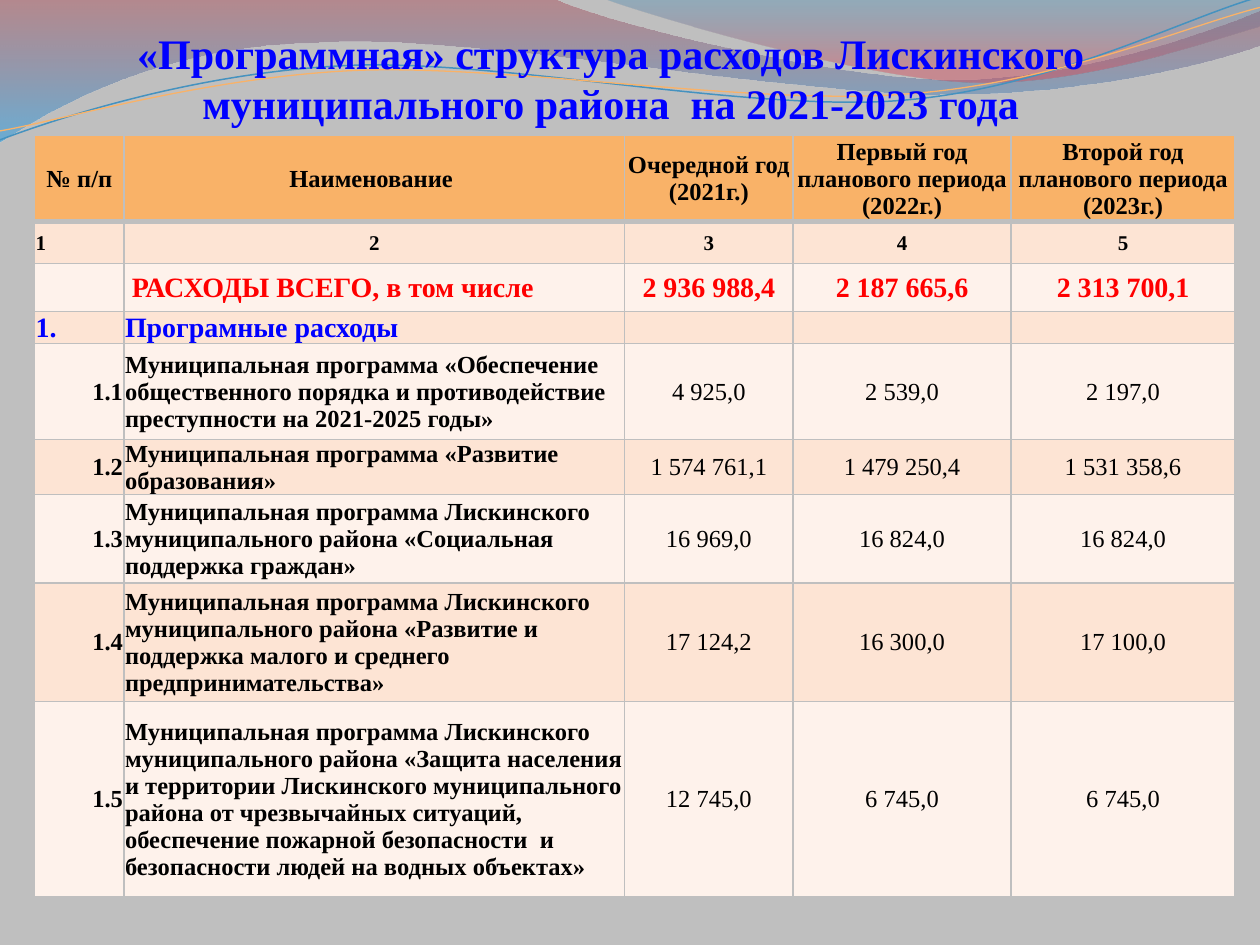
from dataclasses import dataclass

from pptx import Presentation
from pptx.dml.color import RGBColor
from pptx.enum.text import MSO_ANCHOR, MSO_AUTO_SIZE, PP_ALIGN
from pptx.oxml import parse_xml
from pptx.oxml.ns import nsdecls, qn
from pptx.util import Cm, Pt
from lxml.etree import SubElement


@dataclass(frozen=True)
class Theme:
    font: str = "Times New Roman"
    page: str = "BFBFBF"
    header: str = "F9B268"
    bands: tuple = ("FEF2EB", "FDE4D4")
    text: str = "000000"
    accent: str = "0000FF"
    total: str = "FF0000"
    blue_line: str = "4592BF"
    orange_line: str = "F9B268"
    # gradient stops: position, colour, opacity in percent
    wide_wave: tuple = ((0, "A84752", 45), (1, "249FE6", 55))
    right_wave: tuple = ((0, "2A7EAF", 30), (0.8, "D24B5A", 45))
    title_size: int = 24
    section_size: int = 16
    body_size: int = 14
    number_size: int = 12


theme = Theme()
LEFT, CENTER, RIGHT = PP_ALIGN.LEFT, PP_ALIGN.CENTER, PP_ALIGN.RIGHT


def add_curve(start, segments, closed):
    """Draw from start in cm; a segment is a line (x, y) or a Bezier (x1, y1, x2, y2, x, y)."""
    places = [(Cm(segment[i]), Cm(segment[i + 1]))
              for segment in segments for i in range(0, len(segment), 2)]
    builder = page.shapes.build_freeform(Cm(start[0]), Cm(start[1]), scale=1.0)
    builder.add_line_segments(places, close=closed)
    curve = builder.convert_to_shape()
    curve.shadow.inherit = False
    # Each Bezier takes the three points that the builder wrote as lines
    lines = iter(list(curve._element.iter(qn("a:lnTo"))))
    for segment in segments:
        nodes = [next(lines) for _ in range(len(segment) // 2)]
        if len(nodes) == 3:
            bezier = parse_xml(f'<a:cubicBezTo {nsdecls("a")}/>')
            nodes[0].addprevious(bezier)
            for node in nodes:
                bezier.append(node[0])
                node.getparent().remove(node)
    return curve


def add_text(para, text, size, colour, bold, align):
    para.alignment = align
    span = para.add_run()
    span.text = text
    span.font.name = theme.font
    span.font.size = Pt(size)
    span.font.bold = bold
    span.font.color.rgb = RGBColor.from_string(colour)


deck = Presentation()
deck.slide_width, deck.slide_height = Cm(25.4), Cm(19.05)
page = deck.slides.add_slide(deck.slide_layouts[5])
page.background.fill.solid()
page.background.fill.fore_color.rgb = RGBColor.from_string(theme.page)

# Waves along the top
waves = [
    (theme.wide_wave, (0, 0), [
        (11.18, -0.02), (12.09, 0.43, 16.87, 1.6, 19.25, 1.6),
        (21.67, 1.6, 24.33, 0.66, 25.4, 0.23), (25.42, 0.91),
        (24.97, 1.12, 22.1, 1.93, 18.95, 1.9), (15.8, 1.9, 9.7, 0.71, 6.53, 0.86),
        (3.28, 0.91, 1.17, 2.11, -0.02, 2.87), (0, 0)]),
    (theme.right_wave, (12.17, -0.02), [
        (12.93, 0.28, 17.32, 1.57, 19.53, 1.65),
        (21.74, 1.75, 24.41, 0.81, 25.4, 0.53), (25.4, 0), (12.17, -0.02)]),
]
for stops, start, segments in waves:
    wave = add_curve(start, segments, closed=True)
    wave.line.fill.background()
    wave.fill.gradient()
    wave.fill.gradient_angle = 270
    for stop, (position, colour, _) in zip(wave.fill.gradient_stops, stops):
        stop.position = position
        stop.color.rgb = RGBColor.from_string(colour)
    for node, (_, _, opacity) in zip(wave._element.spPr.iter(qn("a:srgbClr")), stops):
        SubElement(node, qn("a:alpha"), val=str(opacity * 1000))

ribbons = [
    (theme.blue_line, 0.85, (0, 2.82), [
        (1.22, 2.36, 4.01, 1.45, 7.04, 1.32), (10.03, 1.19, 15.06, 2.26, 18.11, 2.03),
        (21.16, 1.8, 23.83, 0.38, 25.35, -0.05)]),
    (theme.orange_line, 0.75, (0, 2.64), [
        (1.19, 2.44, 4.17, 1.55, 7.19, 1.42), (10.24, 1.3, 15.16, 2.13, 18.21, 1.9),
        (21.23, 1.7, 23.9, 0.53, 25.4, 0.15)]),
]
for colour, width, start, segments in ribbons:
    ribbon = add_curve(start, segments, closed=False)
    ribbon.fill.background()
    ribbon.line.color.rgb = RGBColor.from_string(colour)
    ribbon.line.width = Pt(width)

# Title, brought in front of the waves
title = page.shapes.title
page.shapes._spTree.append(title._element)
title.left, title.top, title.width, title.height = Cm(0.6), Cm(0.6), Cm(23.42), Cm(1.98)
frame = title.text_frame
frame.word_wrap = True
frame.auto_size = MSO_AUTO_SIZE.NONE
frame.vertical_anchor = MSO_ANCHOR.BOTTOM
frame.margin_left = frame.margin_right = frame.margin_bottom = 0
frame.margin_top = Cm(0.13)
add_text(frame.paragraphs[0],
         "«Программная» структура расходов Лискинского муниципального района  на 2021-2023 года",
         theme.title_size, theme.accent, True, CENTER)

# Table: height in cm, size, colour, alignment of the first two columns, cells
column_widths = [1.8, 10.09, 3.4, 4.39, 4.52]
body = (theme.body_size, theme.text, RIGHT, LEFT)
rows = [
    (1.75, theme.body_size, theme.text, CENTER, CENTER,
     ["№ п/п", "Наименование ", "Очередной год (2021г.)",
      "Первый год планового периода (2022г.)", "Второй год планового периода (2023г.)"]),
    (0.84, theme.number_size, theme.text, LEFT, CENTER, ["1", "2", "3", "4", "5"]),
    (0.97, theme.section_size, theme.total, LEFT, LEFT,
     ["", " РАСХОДЫ ВСЕГО, в том числе", "2 936 988,4", "2 187 665,6", "2 313 700,1"]),
    (0.61, theme.section_size, theme.accent, LEFT, LEFT,
     ["1.", "Програмные расходы", "", "", ""]),
    (1.93, *body,
     ["1.1", "Муниципальная программа «Обеспечение общественного порядка и противодействие "
      "преступности на 2021-2025 годы»", "4 925,0", "2 539,0", "2 197,0"]),
    (0.79, *body,
     ["1.2", "Муниципальная программа «Развитие образования»",
      "1 574 761,1", "1 479 250,4", "1 531 358,6"]),
    (1.78, *body,
     ["1.3", "Муниципальная программа Лискинского муниципального района «Социальная "
      "поддержка граждан»", "16 969,0", "16 824,0", "16 824,0"]),
    (2.39, *body,
     ["1.4", "Муниципальная программа Лискинского муниципального района «Развитие и "
      "поддержка малого и среднего предпринимательства»", "17 124,2", "16 300,0", "17 100,0"]),
    (3.94, *body,
     ["1.5", "Муниципальная программа Лискинского муниципального района «Защита населения "
      "и территории Лискинского муниципального района от чрезвычайных ситуаций, обеспечение "
      "пожарной безопасности  и безопасности людей на водных объектах»",
      "12 745,0", "6 745,0", "6 745,0"]),
]
table = page.shapes.add_table(
    len(rows), len(column_widths), Cm(0.7), Cm(2.72),
    Cm(sum(column_widths)), Cm(sum(row[0] for row in rows))).table
for column, width in zip(table.columns, column_widths):
    column.width = Cm(width)

for row_index, (height, size, colour, first_align, name_align, texts) in enumerate(rows):
    table.rows[row_index].height = Cm(height)
    fill_colour = theme.bands[row_index % 2] if row_index else theme.header
    aligns = [first_align, name_align, CENTER, CENTER, CENTER]
    border_widths = {"L": 1, "R": 1, "T": 3 if row_index == 1 else 1,
                     "B": 1 if row_index else 3}
    for column_index, (text, align) in enumerate(zip(texts, aligns)):
        cell = table.cell(row_index, column_index)
        cell.margin_left = cell.margin_right = cell.margin_top = Cm(0.02)
        cell.margin_bottom = 0
        cell.vertical_anchor = MSO_ANCHOR.MIDDLE
        for side, width in border_widths.items():
            cell._tc.get_or_add_tcPr().append(parse_xml(
                f'<a:ln{side} {nsdecls("a")} w="{Pt(width)}"><a:solidFill>'
                f'<a:srgbClr val="{theme.page}"/></a:solidFill></a:ln{side}>'))
        cell.fill.solid()
        cell.fill.fore_color.rgb = RGBColor.from_string(fill_colour)
        para = cell.text_frame.paragraphs[0]
        if text:
            bold = row_index < 4 or column_index < 2
            add_text(para, text, size, colour, bold, align)
        else:  # keeps an empty cell from stretching its row
            SubElement(para._p, qn("a:endParaRPr"), sz=str(theme.body_size * 100))

deck.save("out.pptx")
